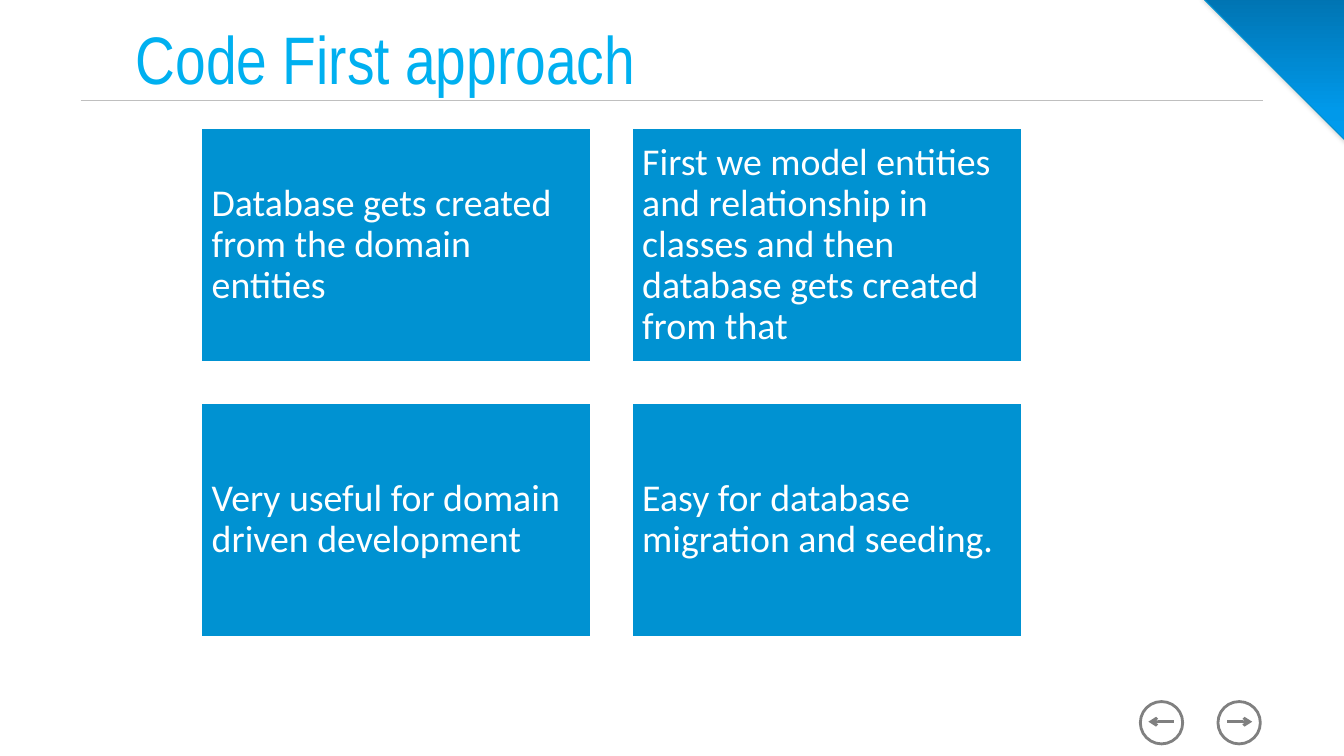
from copy import deepcopy

from lxml import etree
from pptx import Presentation
from pptx.dml.color import RGBColor
from pptx.enum.shapes import MSO_CONNECTOR, MSO_SHAPE
from pptx.enum.text import MSO_ANCHOR, PP_ALIGN
from pptx.oxml.ns import qn
from pptx.util import Inches, Pt

COLORS = {
    "title": "00B0F0", "card": "0092D2", "white": "FFFFFF",
    "rule": "BFBFBF", "nav": "808080", "corner_line": "0091D2",
    "corner_light": "009CF0", "corner_mid": "0099EA", "corner_dark": "0074B2",
}
RGB = {name: RGBColor.from_string(value) for name, value in COLORS.items()}

prs = Presentation()
prs.slide_width, prs.slide_height = Inches(13.33), Inches(7.5)
s = prs.slides.add_slide(prs.slide_layouts[6])


def add_line(x1, y1, x2, y2, color, width):
    line = s.shapes.add_connector(
        MSO_CONNECTOR.STRAIGHT, Inches(x1), Inches(y1), Inches(x2), Inches(y2))
    line.line.color.rgb = RGB[color]
    line.line.width = Pt(width)
    etree.SubElement(line._element.spPr, qn("a:effectLst"))
    return line


def add_text(tf, text, font, size, color):
    tf.word_wrap = True
    tf.vertical_anchor = MSO_ANCHOR.MIDDLE
    p = tf.paragraphs[0]
    p.alignment = PP_ALIGN.LEFT
    r = p.add_run()
    r.text = text
    r.font.name, r.font.size = font, Pt(size)
    r.font.color.rgb = RGB[color]
    return p


# Double rule under the title
for y, color in ((1, "rule"), (1.01, "white")):
    add_line(0.8, y, 12.53, y, color, 0.75)

# Previous and next buttons
DIAMETER, NAV_TOP = 0.42, 6.96
for left, tail, head in ((11.31, 0.33, 0.08), (12.08, 0.09, 0.34)):
    sp = s.shapes.add_shape(MSO_SHAPE.OVAL, Inches(left), Inches(NAV_TOP),
                            Inches(DIAMETER), Inches(DIAMETER))
    sp.shadow.inherit = False
    sp.fill.background()
    sp.line.color.rgb = RGB["nav"]
    sp.line.width = Pt(2)
    arrow = add_line(left + tail, NAV_TOP + 0.2, left + head, NAV_TOP + 0.2, "nav", 2)
    etree.SubElement(arrow.line._get_or_add_ln(), qn("a:tailEnd"), type="arrow")

# Gradient corner with a soft shadow
sp = s.shapes.add_shape(MSO_SHAPE.RIGHT_TRIANGLE, Inches(11.92), Inches(-0.03),
                        Inches(1.42), Inches(1.42))
sp.rotation = 180
sp.fill.gradient()
sp.fill.gradient_angle = 270
first_stop = sp._element.spPr.find(".//" + qn("a:gs"))
first_stop.addnext(deepcopy(first_stop))
corner_stops = ((0, "corner_light"), (0.2, "corner_mid"), (1, "corner_dark"))
for stop, (position, color) in zip(sp.fill.gradient_stops, corner_stops):
    stop.position = position
    stop.color.rgb = RGB[color]
sp.line.color.rgb = RGB["corner_line"]
sp.line.width = Pt(0.75)
sp.shadow.inherit = False
shadow = etree.SubElement(
    sp._element.spPr.find(qn("a:effectLst")), qn("a:outerShdw"),
    blurRad=str(Pt(3.1)), dist=str(Pt(1.8)), dir="5400000", rotWithShape="0")
shade = etree.SubElement(shadow, qn("a:srgbClr"), val=COLORS["nav"])
etree.SubElement(shade, qn("a:alpha"), val="35000")

# Title
title = s.shapes.add_textbox(Inches(1.25), Inches(0.18), Inches(10.8), Inches(0.79))
add_text(title.text_frame, "Code First approach", "Arial Narrow", 48, "title")

# Two by two grid of cards
CARD_W, CARD_H = 3.88, 2.33
GRID_LEFT, GRID_TOP, GAP = 1.99, 1.27, 0.39
cards = [
    "Database gets created from the domain entities",
    "First we model entities and relationship in classes and then "
    "database gets created from that",
    "Very useful for domain driven development",
    "Easy for database migration and seeding.",
]
for i, text in enumerate(cards):
    row, col = divmod(i, 2)
    sp = s.shapes.add_shape(
        MSO_SHAPE.RECTANGLE,
        Inches(GRID_LEFT + col * (CARD_W + GAP)),
        Inches(GRID_TOP + row * (CARD_H + GAP)),
        Inches(CARD_W), Inches(CARD_H))
    sp.shadow.inherit = False
    sp.fill.solid()
    sp.fill.fore_color.rgb = RGB["card"]
    sp.line.color.rgb = RGB["white"]
    sp.line.width = Pt(2)
    tf = sp.text_frame
    tf.margin_left = tf.margin_right = tf.margin_top = tf.margin_bottom = Inches(0.11)
    p = add_text(tf, text, "Calibri", 27, "white")
    p.line_spacing = 0.9

prs.save("out.pptx")
